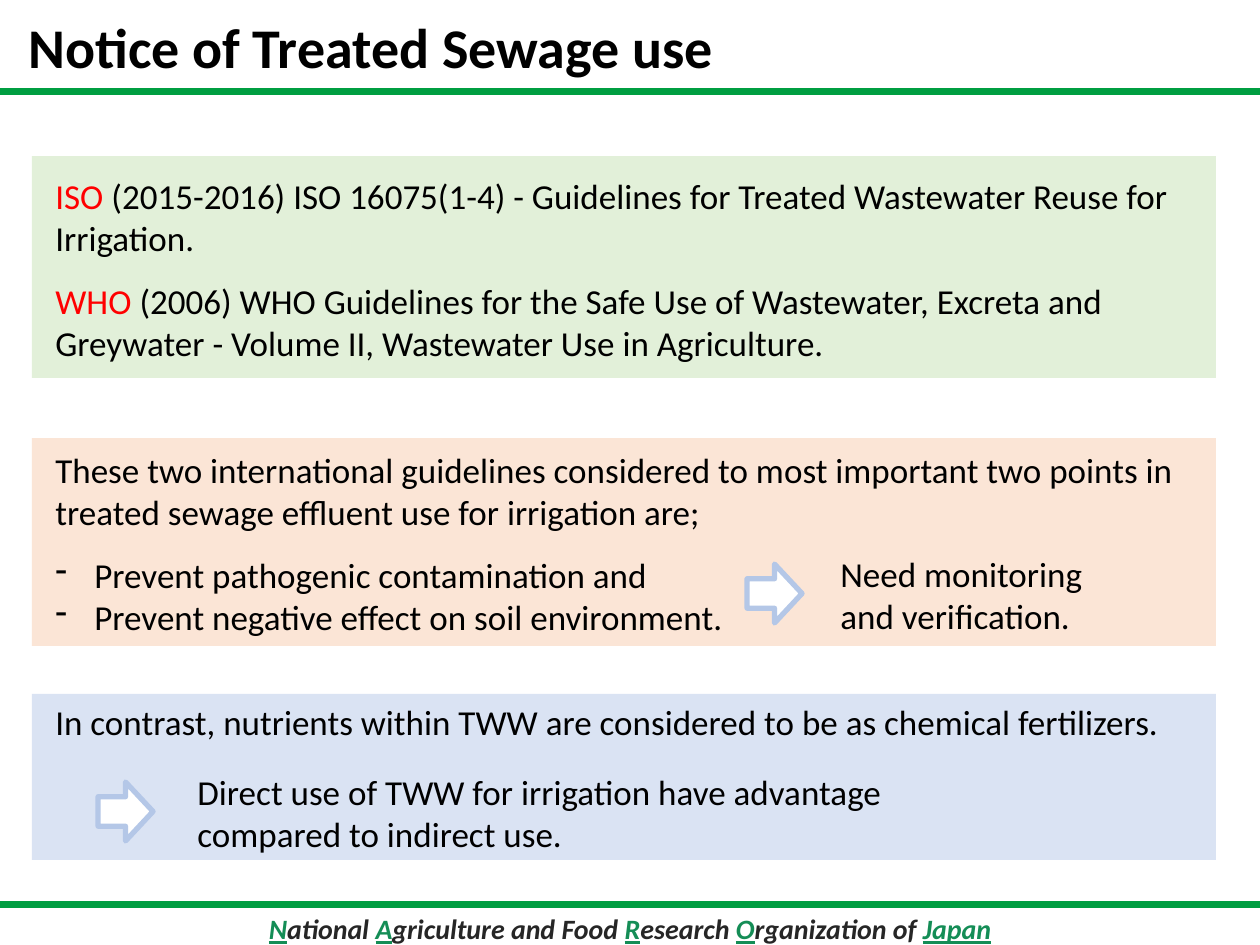
import lxml.etree
import pptx
import pptx.dml.color
import pptx.enum.shapes
import pptx.enum.text
import pptx.oxml.ns
import pptx.util

PIXELS_PER_INCH = 126
FONT = "Calibri"
BODY_SIZE = 20
PANEL_LEFT, PANEL_WIDTH = 32, 1184
TEXT_LEFT, TEXT_WIDTH = 43, 1145
ARROW_SIZE = (55, 59)
COLORS = {
    "rule": "009E41",
    "initial": "148D56",
    "footer": "262626",
    "text": "000000",
    "source": "FF0000",
    "green": "E2F0D9",
    "orange": "FBE5D6",
    "blue": "DAE3F3",
    "arrow_fill": "FFFFFF",
    "arrow_line": "B4C7E7",
}


def px(value):
    """Turn pixels into EMU."""
    return pptx.util.Emu(round(value * 914400 / PIXELS_PER_INCH))


def color(name):
    """Look up a named colour."""
    return pptx.dml.color.RGBColor.from_string(COLORS[name])


def add_rule(slide, top):
    """Draw a green line across the slide."""
    line = slide.shapes.add_connector(
        pptx.enum.shapes.MSO_CONNECTOR.STRAIGHT, px(0), px(top), px(1260), px(top)
    )
    line.line.color.rgb = color("rule")
    line.line.width = pptx.util.Pt(4)
    properties = line._element.spPr
    lxml.etree.SubElement(properties, pptx.oxml.ns.qn("a:effectLst"))


def add_filled_shape(slide, kind, box, fill):
    """Add an outline-free shape with a flat fill."""
    shape = slide.shapes.add_shape(kind, *map(px, box))
    shape.shadow.inherit = False
    shape.fill.solid()
    shape.fill.fore_color.rgb = color(fill)
    shape.line.fill.background()
    return shape


def add_panel(slide, top, height, fill):
    """Add a full-width coloured panel."""
    box = (PANEL_LEFT, top, PANEL_WIDTH, height)
    add_filled_shape(slide, pptx.enum.shapes.MSO_SHAPE.RECTANGLE, box, fill)


def add_arrow(slide, left, top):
    """Add an outlined block arrow pointing right."""
    box = (left, top, *ARROW_SIZE)
    arrow = add_filled_shape(
        slide, pptx.enum.shapes.MSO_SHAPE.RIGHT_ARROW, box, "arrow_fill"
    )
    arrow.line.color.rgb = color("arrow_line")
    arrow.line.width = pptx.util.Pt(3)


def add_dash(paragraph):
    """Give a paragraph a hanging dash bullet."""
    properties = paragraph._p.get_or_add_pPr()
    properties.set("marL", str(px(39)))
    properties.set("indent", str(px(-39)))
    lxml.etree.SubElement(properties, pptx.oxml.ns.qn("a:buFontTx"))
    bullet = lxml.etree.SubElement(properties, pptx.oxml.ns.qn("a:buChar"))
    bullet.set("char", "-")


def add_run(paragraph, text, name="text", size=BODY_SIZE):
    """Append a coloured run and return its font."""
    run = paragraph.add_run()
    run.text = text
    run.font.name = FONT
    run.font.size = pptx.util.Pt(size)
    run.font.color.rgb = color(name)
    return run.font


def add_text_frame(slide, box, wrap=True):
    """Add a text box and return its frame."""
    frame = slide.shapes.add_textbox(*map(px, box)).text_frame
    frame.word_wrap = wrap
    return frame


def add_body(slide, box, text):
    """Add a text box holding one plain paragraph."""
    frame = add_text_frame(slide, box)
    add_run(frame.paragraphs[0], text)
    return frame


def add_title(slide):
    """Add the slide title."""
    frame = add_text_frame(slide, (16, 6, 717, 81), wrap=False)
    add_run(frame.paragraphs[0], "Notice of Treated Sewage use", size=32).bold = True


def add_footer(slide):
    """Add the organization name with its initials underlined."""
    parts = [
        ("N", "ational "),
        ("A", "griculture and Food "),
        ("R", "esearch "),
        ("O", "rganization of "),
        ("Japan", ""),
    ]
    paragraph = add_text_frame(slide, (93, 905, 1074, 47)).paragraphs[0]
    paragraph.alignment = pptx.enum.text.PP_ALIGN.CENTER
    for initial, rest in parts:
        for text, name in ((initial, "initial"), (rest, "footer")):
            if text:
                font = add_run(paragraph, text, name, 16)
                font.bold = font.italic = True
                font.underline = name == "initial"


def add_guidelines(slide):
    """List the two guidelines, each led by its publisher."""
    guidelines = [
        ("ISO ", "(2015-2016) ISO 16075(1-4) - Guidelines for Treated "
         "Wastewater Reuse for Irrigation."),
        ("WHO ", "(2006) WHO Guidelines for the Safe Use of Wastewater, Excreta "
         "and Greywater - Volume II, Wastewater Use in Agriculture."),
    ]
    frame = add_text_frame(slide, (TEXT_LEFT, 168, TEXT_WIDTH, 203))
    for index, (publisher, citation) in enumerate(guidelines):
        paragraph = frame.add_paragraph() if index else frame.paragraphs[0]
        if index:
            paragraph.space_before = pptx.util.Pt(12)
        add_run(paragraph, publisher, "source")
        add_run(paragraph, citation)


def add_key_points(slide):
    """Introduce and list the two shared points."""
    frame = add_body(
        slide,
        (TEXT_LEFT, 442, TEXT_WIDTH, 204),
        "These two international guidelines considered to most important two points "
        "in treated sewage effluent use for irrigation are;",
    )
    points = [
        "Prevent pathogenic contamination and",
        "Prevent negative effect on soil environment.",
    ]
    for index, text in enumerate(points):
        paragraph = frame.add_paragraph()
        add_dash(paragraph)
        paragraph.space_before = pptx.util.Pt(0 if index else 12)
        add_run(paragraph, text)


def main():
    """Build and save the slide."""
    presentation = pptx.Presentation()
    presentation.slide_width = px(1260)
    presentation.slide_height = px(945)
    slide = presentation.slides.add_slide(presentation.slide_layouts[6])
    add_rule(slide, 92)
    add_footer(slide)
    add_rule(slide, 905)
    add_panel(slide, 694, 166, "blue")
    add_panel(slide, 438, 208, "orange")
    add_panel(slide, 156, 222, "green")
    add_title(slide)
    add_guidelines(slide)
    add_key_points(slide)
    add_body(
        slide,
        (TEXT_LEFT, 694, TEXT_WIDTH, 55),
        "In contrast, nutrients within TWW are considered to be as chemical fertilizers.",
    )
    add_arrow(slide, 98, 782)
    add_body(
        slide,
        (185, 764, 723, 97),
        "Direct use of TWW for irrigation have advantage compared to indirect use.",
    )
    add_arrow(slide, 747, 564)
    add_body(slide, (828, 546, 306, 97), "Need monitoring and verification.")
    presentation.save("out.pptx")


if __name__ == "__main__":
    main()
